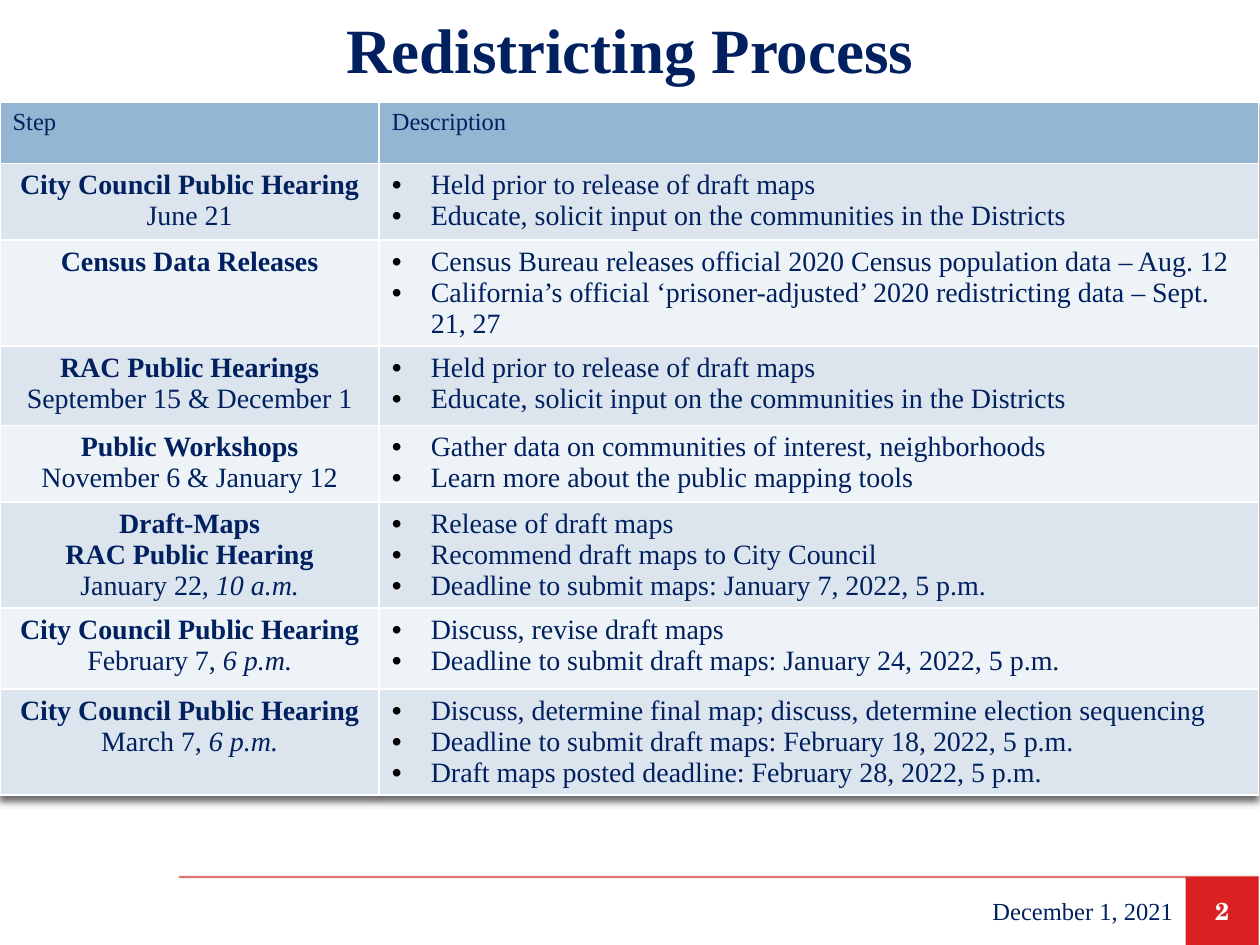
from dataclasses import dataclass

from lxml.etree import SubElement
from pptx import Presentation
from pptx.dml.color import RGBColor
from pptx.enum.shapes import MSO_CONNECTOR as Connector, MSO_SHAPE as Shape
from pptx.enum.text import MSO_ANCHOR as Anchor, PP_ALIGN as Align
from pptx.oxml import parse_xml
from pptx.oxml.ns import nsdecls, qn
from pptx.util import Inches, Pt

NAVY = RGBColor(0x00, 0x20, 0x60)
RED = RGBColor(0xD9, 0x21, 0x21)
RULE_RED = RGBColor(0xC8, 0x00, 0x00)
WHITE = RGBColor(0xFF, 0xFF, 0xFF)
HEADER_BLUE = RGBColor(0x94, 0xB6, 0xD2)
BANDS = (RGBColor(0xDC, 0xE5, 0xEE), RGBColor(0xEE, 0xF3, 0xF7))
SERIF = "Times New Roman"
SCHOLA = "TeX Gyre Schola"

WIDTH, HEIGHT = Inches(10), Inches(7.5)
RIGHT_EDGE = 99.9
FOOTER_TOP, FOOTER_HEIGHT = 92.8, 7.2
BULLET_INDENT = Inches(0.31)


@dataclass(frozen=True)
class Step:
    height: float  # percent of the slide height
    names: tuple[str, ...]
    tasks: tuple[str, ...]
    date: str = ""
    time: str = ""


HEARING = ("City Council Public Hearing",)
OUTREACH = ("Held prior to release of draft maps",
            "Educate, solicit input on the communities in the Districts")
HEADER_HEIGHT = 6.5
STEPS = (
    Step(8.1, HEARING, OUTREACH, "June 21"),
    Step(8.7, ("Census Data Releases",),
         ("Census Bureau releases official 2020 Census population data – Aug. 12",
          "California’s official ‘prisoner-adjusted’ 2020 redistricting data – Sept. 21, 27")),
    Step(8.4, ("RAC Public Hearings",), OUTREACH, "September 15 & December 1"),
    Step(8.1, ("Public Workshops",),
         ("Gather data on communities of interest, neighborhoods",
          "Learn more about the public mapping tools"), "November 6 & January 12"),
    Step(10.3, ("Draft-Maps", "RAC Public Hearing"),
         ("Release of draft maps", "Recommend draft maps to City Council",
          "Deadline to submit maps: January 7, 2022, 5 p.m."), "January 22, ", "10 a.m."),
    Step(8.6, HEARING,
         ("Discuss, revise draft maps",
          "Deadline to submit draft maps: January 24, 2022, 5 p.m."), "February 7, ", "6 p.m."),
    Step(10.3, HEARING,
         ("Discuss, determine final map; discuss, determine election sequencing",
          "Deadline to submit draft maps: February 18, 2022, 5 p.m.",
          "Draft maps posted deadline: February 28, 2022, 5 p.m."), "March 7, ", "6 p.m."),
)


def across(percent: float) -> int:
    return round(WIDTH * percent / 100)


def down(percent: float) -> int:
    return round(HEIGHT * percent / 100)


def frame(left: float, top: float, width: float, height: float) -> tuple[int, ...]:
    return across(left), down(top), across(width), down(height)


def set_font(font, size: float, color=NAVY, name=SERIF, bold=False, italic=False) -> None:
    font.name, font.size, font.bold, font.italic = name, Pt(size), bold, italic
    font.color.rgb = color


def write_line(shape, text: str, align, size: float, **style) -> None:
    """Put one vertically centred line of text in a shape."""
    text_frame = shape.text_frame
    text_frame.word_wrap = True
    text_frame.vertical_anchor = Anchor.MIDDLE
    para = text_frame.paragraphs[0]
    para.text, para.alignment = text, align
    set_font(para.font, size, **style)


def add_span(para, text: str, size: float = 16, **style) -> None:
    span = para.add_run()
    span.text = text
    set_font(span.font, size, **style)


def add_bullet(para) -> None:
    props = para._p.get_or_add_pPr()
    props.set("marL", str(BULLET_INDENT))
    props.set("indent", str(-BULLET_INDENT))
    color = SubElement(props, qn("a:buClr"))
    SubElement(color, qn("a:srgbClr"), val="000000")
    SubElement(props, qn("a:buFont"), typeface="Arial")
    SubElement(props, qn("a:buChar"), char="•")


def cell_paragraphs(cell, count: int) -> list:
    text_frame = cell.text_frame
    return [text_frame.paragraphs[0], *(text_frame.add_paragraph() for _ in range(count - 1))]


def fill_cell(cell, color: RGBColor) -> None:
    cell.fill.solid()
    cell.fill.fore_color.rgb = color


def write_step(name_cell, task_cell, step: Step) -> None:
    paras = cell_paragraphs(name_cell, len(step.names) + bool(step.date))
    for para in paras:
        para.alignment = Align.CENTER
    for para, name in zip(paras, step.names):
        add_span(para, name, bold=True)
    if step.date:
        add_span(paras[-1], step.date)
    if step.time:
        add_span(paras[-1], step.time, italic=True)
    for para, task in zip(cell_paragraphs(task_cell, len(step.tasks)), step.tasks):
        add_bullet(para)
        add_span(para, task)


def add_schedule(page) -> None:
    heights = (HEADER_HEIGHT, *(step.height for step in STEPS))
    table = page.shapes.add_table(
        len(heights), 2, *frame(0, 10.8, RIGHT_EDGE, sum(heights))).table
    for column, width in zip(table.columns, (30.1, 69.8)):
        column.width = across(width)
    for row, height in zip(table.rows, heights):
        row.height = down(height)
    for cell, label in zip(table.rows[0].cells, ("Step", "Description")):
        fill_cell(cell, HEADER_BLUE)
        add_span(cell.text_frame.paragraphs[0], label, 14)
    for index, step in enumerate(STEPS):
        cells = tuple(table.rows[index + 1].cells)
        for cell in cells:
            fill_cell(cell, BANDS[index % 2])
        write_step(*cells, step)
    table._tbl.tblPr.insert(0, parse_xml(
        f'<a:effectLst {nsdecls("a")}><a:outerShdw blurRad="50800" dist="38100" dir="5400000">'
        '<a:srgbClr val="000000"><a:alpha val="60000"/></a:srgbClr>'
        '</a:outerShdw></a:effectLst>'))


def add_footer(page) -> None:
    rule = page.shapes.add_connector(
        Connector.STRAIGHT, across(14.2), down(FOOTER_TOP), across(RIGHT_EDGE), down(FOOTER_TOP))
    rule.line.width = Pt(1.25)
    rule.line.color.rgb = RULE_RED
    color = rule.line._ln.find(".//" + qn("a:srgbClr"))
    SubElement(color, qn("a:alpha"), val="55000")
    SubElement(rule._element.spPr, qn("a:effectLst"))

    badge = page.shapes.add_shape(
        Shape.RECTANGLE, *frame(94.1, FOOTER_TOP, 5.8, FOOTER_HEIGHT))
    badge.shadow.inherit = False
    badge.fill.solid()
    badge.fill.fore_color.rgb = RED
    badge.line.fill.background()
    write_line(badge, "2", Align.CENTER, 14, color=WHITE, name=SCHOLA, bold=True)

    date_box = page.shapes.add_textbox(*frame(76.7, FOOTER_TOP, 17.4, FOOTER_HEIGHT))
    write_line(date_box, "December 1, 2021", Align.RIGHT, 14)


def main() -> None:
    deck = Presentation()
    deck.slide_width, deck.slide_height = WIDTH, HEIGHT
    page = deck.slides.add_slide(deck.slide_layouts[5])
    title = page.shapes.title
    title.left, title.top, title.width, title.height = frame(0, -2.1, 100, 14.4)
    write_line(title, "Redistricting Process", Align.CENTER, 36, bold=True)
    add_schedule(page)
    add_footer(page)
    deck.save("out.pptx")


if __name__ == "__main__":
    main()
